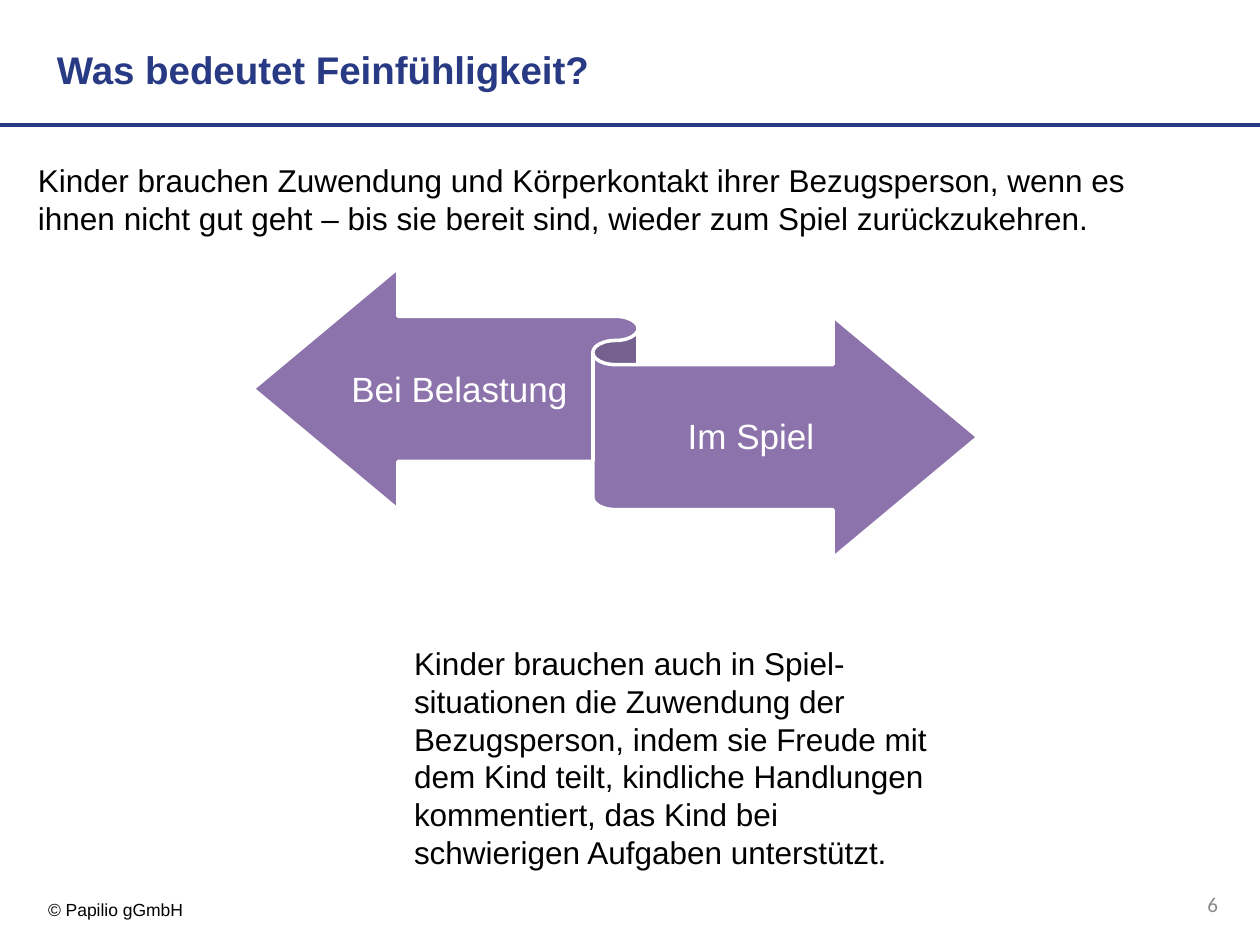
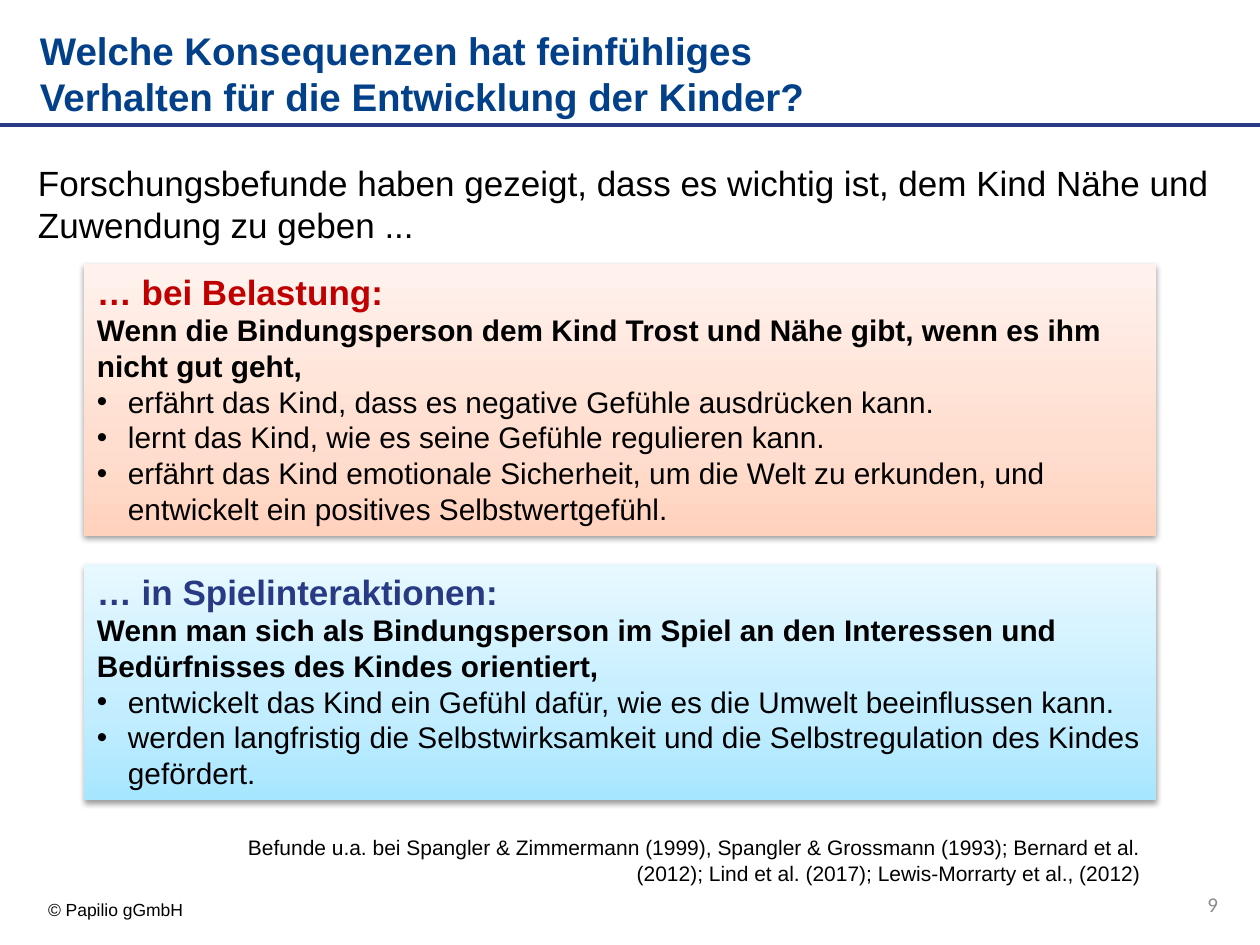
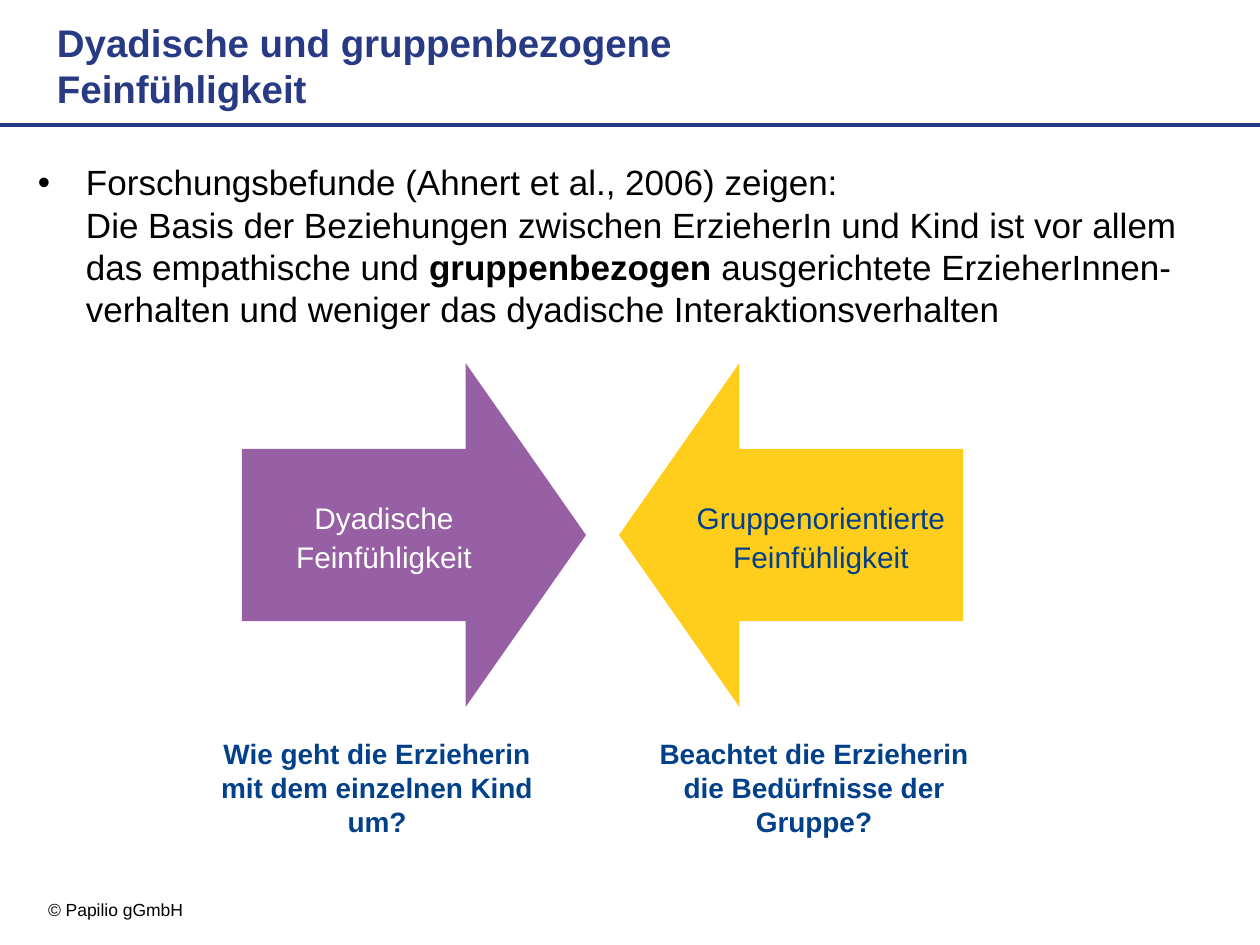
from dataclasses import dataclass

from lxml.etree import SubElement
from pptx import Presentation
from pptx.dml.color import RGBColor
from pptx.enum.shapes import MSO_CONNECTOR, MSO_SHAPE
from pptx.enum.text import MSO_ANCHOR as ANCHOR, MSO_AUTO_SIZE, PP_ALIGN as ALIGN
from pptx.oxml.ns import qn
from pptx.util import Emu, Pt

PX_PER_INCH = 126
TITLE_ONLY = 5


@dataclass(frozen=True)
class Theme:
    font: str = "Arial"
    number_font: str = "Calibri"
    navy: str = "283A84"
    blue: str = "024089"
    red: str = "C00000"
    black: str = "000000"
    white: str = "FFFFFF"
    grey: str = "8C8C8C"
    ribbon: str = "8064A2"
    purple: str = "9860A4"
    yellow: str = "FFCD1C"
    warm: tuple[str, ...] = ("FFD2BD", "FFDED0", "FFF2ED")
    cool: tuple[str, ...] = ("A7E6FF", "C1EDFF", "E7F8FF")
    title: int = 22
    lead: int = 20
    body: int = 18
    panel: int = 17
    caption: int = 16
    small: int = 12
    footer: int = 10


T = Theme()


@dataclass(frozen=True)
class Box:
    x: int
    y: int
    w: int
    h: int

    def emu(self) -> tuple[Emu, ...]:
        return tuple(px(n) for n in (self.x, self.y, self.w, self.h))


@dataclass(frozen=True)
class Span:
    """A piece of text in one style; a newline is a line break."""
    text: str
    size: int = T.body
    color: str = T.black
    bold: bool = False
    font: str = T.font


@dataclass(frozen=True)
class Para:
    spans: tuple[Span, ...]
    align: ALIGN = ALIGN.LEFT
    hang: int = 0
    spacing: float = 1.0


@dataclass(frozen=True)
class Panel:
    box: Box
    stops: tuple[str, ...]
    heading: str
    heading_color: str
    condition: str
    effects: tuple[str, ...]


@dataclass(frozen=True)
class Arrow:
    x: int
    rotation: int
    fill: str
    label: str
    label_x: int
    label_color: str
    question: str
    question_x: int


def px(n: int) -> Emu:
    return Emu(round(n * 914400 / PX_PER_INCH))


def rgb(color: str) -> RGBColor:
    return RGBColor.from_string(color)


def para(text: str, size: int = T.body, color: str = T.black, bold: bool = False,
         align: ALIGN = ALIGN.LEFT, hang: int = 0, spacing: float = 1.0,
         font: str = T.font) -> Para:
    return Para((Span(text, size, color, bold, font),), align, hang, spacing)


# Text
def fill_text(sp, paras: list[Para], anchor: ANCHOR = ANCHOR.TOP,
              inset: tuple[int, int] = (13, 6)) -> None:
    tf = sp.text_frame
    tf.word_wrap = True
    tf.auto_size = MSO_AUTO_SIZE.NONE
    tf.vertical_anchor = anchor
    tf.margin_left = tf.margin_right = px(inset[0])
    tf.margin_top = tf.margin_bottom = px(inset[1])
    for i, item in enumerate(paras):
        p = tf.add_paragraph() if i else tf.paragraphs[0]
        p.alignment = item.align
        p.line_spacing = item.spacing
        if item.hang:
            add_bullet(p, item.hang)
        for span in item.spans:
            add_span(p, span)


def add_bullet(p, hang: int) -> None:
    pPr = p._p.get_or_add_pPr()
    pPr.set("marL", str(px(hang)))
    pPr.set("indent", str(-px(hang)))
    SubElement(pPr, qn("a:buFont"), typeface=T.font)
    SubElement(pPr, qn("a:buChar"), char="•")


def add_span(p, span: Span) -> None:
    for i, line in enumerate(span.text.split("\n")):
        if i:
            p.add_line_break()
        if line:
            r = p.add_run()
            r.text = line
            f = r.font
            f.name, f.size, f.bold = span.font, Pt(span.size), span.bold
            f.color.rgb = rgb(span.color)


def add_text(slide, box: Box, *paras: Para, anchor: ANCHOR = ANCHOR.TOP,
             inset: tuple[int, int] = (13, 6)) -> None:
    fill_text(slide.shapes.add_textbox(*box.emu()), list(paras), anchor, inset)


# Shapes
def add_plain(slide, kind: MSO_SHAPE, box: Box):
    sp = slide.shapes.add_shape(kind, *box.emu())
    sp.shadow.inherit = False
    sp.line.fill.background()
    return sp


def add_solid(slide, kind: MSO_SHAPE, box: Box, color: str):
    sp = add_plain(slide, kind, box)
    sp.fill.solid()
    sp.fill.fore_color.rgb = rgb(color)
    return sp


def add_panel(slide, panel: Panel) -> None:
    sp = add_plain(slide, MSO_SHAPE.RECTANGLE, panel.box)
    # Three-stop gradient, darkest at the bottom
    sp.fill.gradient()
    sp.fill.gradient_angle = 90
    spPr = sp._element.spPr
    stops = spPr.find(".//" + qn("a:gsLst"))
    for gs in list(stops):
        stops.remove(gs)
    for pos, color in zip((0, 35, 100), panel.stops):
        gs = SubElement(stops, qn("a:gs"), pos=str(pos * 1000))
        SubElement(gs, qn("a:srgbClr"), val=color)
    # Soft shadow below
    shadow = SubElement(spPr.find(qn("a:effectLst")), qn("a:outerShdw"),
                        blurRad="40000", dist="20000", dir="5400000", rotWithShape="0")
    clr = SubElement(shadow, qn("a:srgbClr"), val=T.black)
    SubElement(clr, qn("a:alpha"), val="38000")
    intro = Para((Span(panel.heading + "\n", T.lead, panel.heading_color, True),
                  Span(panel.condition, T.panel, bold=True)))
    fill_text(sp, [intro] + [para(e, T.panel, hang=31) for e in panel.effects])


def add_arrow(slide, arrow: Arrow) -> None:
    sp = add_solid(slide, MSO_SHAPE.DOWN_ARROW, Box(arrow.x, 363, 344, 344), arrow.fill)
    sp.adjustments[0], sp.adjustments[1] = 0.5, 0.35
    sp.rotation = arrow.rotation
    add_text(slide, Box(arrow.label_x, 450, 284, 171),
             para(arrow.label, T.panel, arrow.label_color, align=ALIGN.CENTER, spacing=1.1),
             anchor=ANCHOR.MIDDLE, inset=(16, 16))
    add_text(slide, Box(arrow.question_x, 731, 348, 115),
             para(arrow.question, T.caption, T.blue, True, ALIGN.CENTER))


# Shared frame: title, rule, footer and page number
def new_slide(prs, title: str, box: Box, color: str = T.navy, number: str = ""):
    slide = prs.slides.add_slide(prs.slide_layouts[TITLE_ONLY])
    sp = slide.shapes.title
    sp.left, sp.top, sp.width, sp.height = box.emu()
    fill_text(sp, [para(title, T.title, color, True)])

    rule = slide.shapes.add_connector(MSO_CONNECTOR.STRAIGHT, 0, px(125), px(1260), px(125))
    rule.line.color.rgb = rgb(T.navy)
    rule.line.width = Pt(2)
    SubElement(rule._element.spPr, qn("a:effectLst"))

    add_text(slide, Box(35, 893, 273, 34), para("© Papilio gGmbH", T.footer))
    if number:
        add_text(slide, Box(937, 879, 294, 50),
                 para(number, T.small, T.grey, align=ALIGN.RIGHT, font=T.number_font),
                 anchor=ANCHOR.MIDDLE)
    return slide


def build_meaning(prs) -> None:
    slide = new_slide(prs, "Was bedeutet Feinfühligkeit?", Box(44, 40, 808, 53), number="6")
    add_text(slide, Box(25, 155, 1131, 100), para(
        "Kinder brauchen Zuwendung und Körperkontakt ihrer Bezugsperson, wenn es ihnen "
        "nicht gut geht – bis sie bereit sind, wieder zum Spiel zurückzukehren."))
    add_text(slide, Box(401, 638, 546, 303), para(
        "Kinder brauchen auch in Spiel-situationen die Zuwendung der Bezugsperson, indem "
        "sie Freude mit dem Kind teilt, kindliche Handlungen kommentiert, das Kind bei "
        "schwierigen Aufgaben unterstützt."))

    # Two-way ribbon with a label on each arm
    sp = add_solid(slide, MSO_SHAPE.LEFT_RIGHT_RIBBON, Box(253, 268, 725, 290), T.ribbon)
    clr = sp._element.spPr.find(qn("a:solidFill")).find(qn("a:srgbClr"))
    SubElement(clr, qn("a:alpha"), val="90000")
    sp.line.color.rgb = rgb(T.white)
    sp.line.width = Pt(2)
    for label, box in (("Bei Belastung", Box(340, 320, 239, 142)),
                       ("Im Spiel", Box(610, 367, 282, 142))):
        add_text(slide, box, para(label, T.lead, T.white, align=ALIGN.CENTER, spacing=0.9),
                 anchor=ANCHOR.MIDDLE, inset=(0, 10))


def build_consequences(prs) -> None:
    slide = new_slide(
        prs, "Welche Konsequenzen hat feinfühliges Verhalten für die Entwicklung der Kinder?",
        Box(27, 21, 808, 102), T.blue, "9")
    add_text(slide, Box(25, 155, 1211, 105), para(
        "Forschungsbefunde haben gezeigt, dass es wichtig ist, dem Kind Nähe und "
        "Zuwendung zu geben ...", T.lead))
    panels = (
        Panel(Box(84, 264, 1072, 272), T.warm, "… bei Belastung:", T.red,
              "Wenn die Bindungsperson dem Kind Trost und Nähe gibt, wenn es ihm nicht gut geht,",
              ("erfährt das Kind, dass es negative Gefühle ausdrücken kann.",
               "lernt das Kind, wie es seine Gefühle regulieren kann.",
               "erfährt das Kind emotionale Sicherheit, um die Welt zu erkunden, und "
               "entwickelt ein positives Selbstwertgefühl.")),
        Panel(Box(84, 564, 1072, 236), T.cool, "… in Spielinteraktionen:", T.navy,
              "Wenn man sich als Bindungsperson im Spiel an den Interessen und "
              "Bedürfnisses des Kindes orientiert,",
              ("entwickelt das Kind ein Gefühl dafür, wie es die Umwelt beeinflussen kann.",
               "werden langfristig die Selbstwirksamkeit und die Selbstregulation des Kindes "
               "gefördert.")),
    )
    for panel in panels:
        add_panel(slide, panel)
    add_text(slide, Box(184, 829, 970, 63), para(
        "Befunde u.a. bei Spangler & Zimmermann (1999), Spangler & Grossmann (1993); "
        "Bernard et al. (2012); Lind et al. (2017); Lewis-Morrarty et al., (2012)",
        T.small, align=ALIGN.RIGHT))


def build_group(prs) -> None:
    slide = new_slide(prs, "Dyadische und gruppenbezogene Feinfühligkeit", Box(44, 13, 808, 98))
    add_text(slide, Box(25, 155, 1211, 190), Para((
        Span("Forschungsbefunde (Ahnert et al., 2006) zeigen:\nDie Basis der Beziehungen "
             "zwischen ErzieherIn und Kind ist vor allem das empathische und ", T.lead),
        Span("gruppenbezogen", T.lead, bold=True),
        Span(" ausgerichtete ErzieherInnen-verhalten und weniger das dyadische "
             "Interaktionsverhalten", T.lead)), hang=48))
    arrows = (
        Arrow(242, 270, T.purple, "Dyadische Feinfühligkeit", 242, T.white,
              "Wie geht die Erzieherin mit dem einzelnen Kind um?", 203),
        Arrow(619, 90, T.yellow, "Gruppenorientierte Feinfühligkeit", 679, T.blue,
              "Beachtet die Erzieherin die Bedürfnisse der Gruppe?", 640),
    )
    for arrow in arrows:
        add_arrow(slide, arrow)


def main() -> None:
    prs = Presentation()
    prs.slide_width, prs.slide_height = px(1260), px(945)
    build_meaning(prs)
    build_consequences(prs)
    build_group(prs)
    prs.save("out.pptx")


if __name__ == "__main__":
    main()
